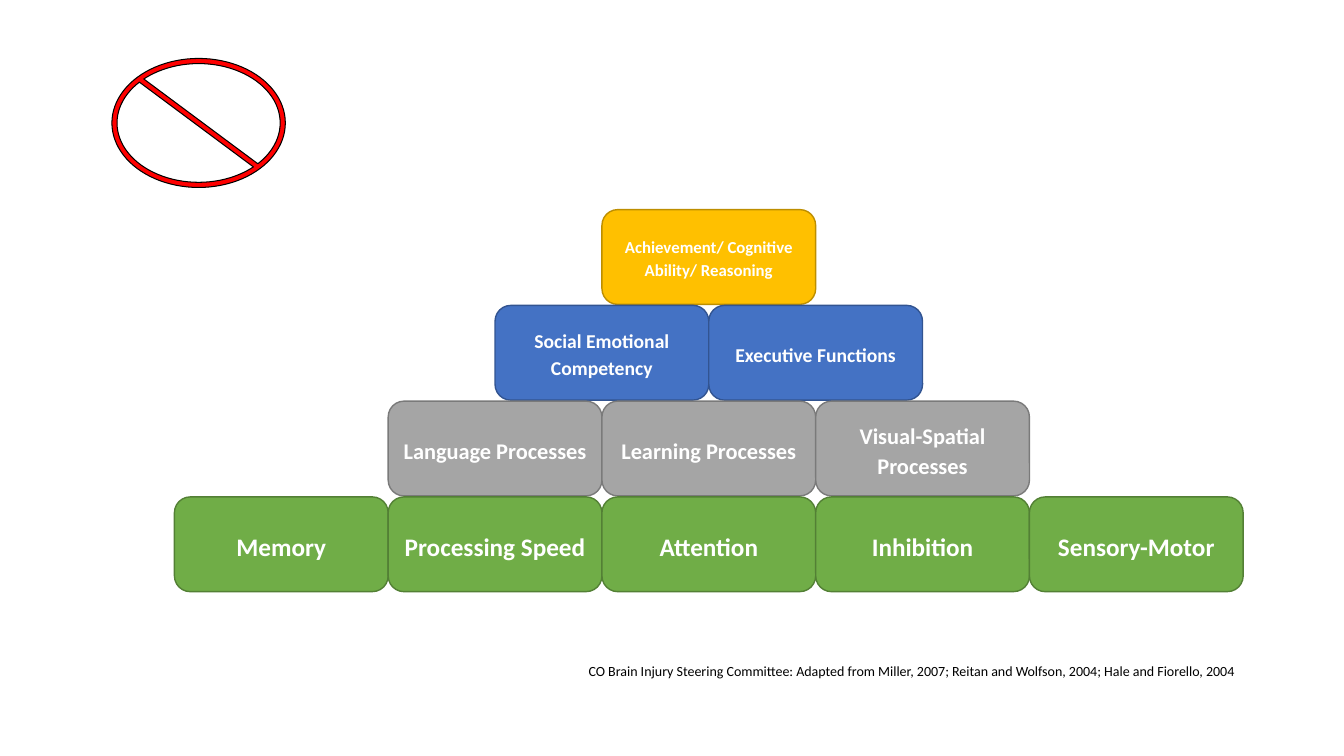
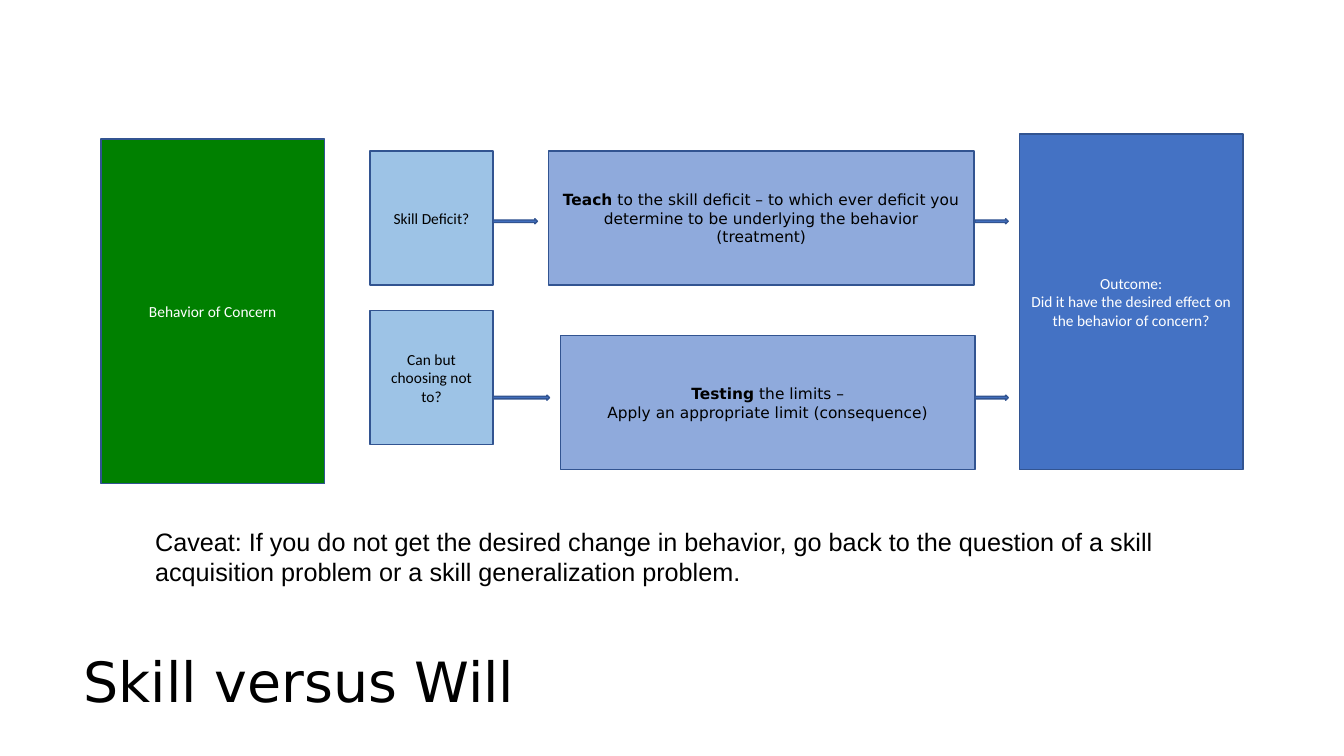
from pptx import Presentation
from pptx.dml.color import RGBColor
from pptx.enum.shapes import MSO_SHAPE
from pptx.enum.text import MSO_ANCHOR, MSO_AUTO_SIZE, PP_ALIGN
from pptx.util import Inches, Pt

WHITE, BLACK, RED = "FFFFFF", "000000", "FF0000"
GREEN, DARK_GREEN = "70AD47", "538035"
GRAY, DARK_GRAY = "A5A5A5", "7A7A7A"
BLUE, DARK_BLUE = "4472C4", "325491"
GOLD, DARK_GOLD = "FFC000", "BD8E00"
SKY, PERIWINKLE, DEEP_GREEN = "9DC3E6", "8FAADC", "008000"
BODY_FONT, ACCENT_FONT, NOTE_FONT = "Calibri", "DejaVu Sans", "Arial"

BLOCK_W, BLOCK_H, ROW_PITCH = 2.12, 0.94, 0.95
PYRAMID_CENTER, PYRAMID_TOP = 7.03, 2.08
PYRAMID_ROWS = [
    (GOLD, DARK_GOLD, 12, ["Achievement/ Cognitive Ability/ Reasoning"]),
    (BLUE, DARK_BLUE, 14, ["Social Emotional Competency", "Executive Functions"]),
    (GRAY, DARK_GRAY, 16, ["Language Processes", "Learning Processes",
                           "Visual-Spatial Processes"]),
    (GREEN, DARK_GREEN, 18, ["Memory", "Processing Speed", "Attention",
                             "Inhibition", "Sensory-Motor"]),
]
PYRAMID_SPACING = {"line_spacing": 1.15, "space_after": Pt(10)}


def rgb(color):
    return RGBColor.from_string(color)


def set_attrs(obj, values):
    for name, value in values.items():
        setattr(obj, name, value)


def write(sp, paragraphs, size, color, font=BODY_FONT, bold=False,
          align=PP_ALIGN.CENTER, anchor=MSO_ANCHOR.MIDDLE, spacing=None):
    """Fill a shape with paragraphs, each a string or a list of (text, bold)."""
    tf = sp.text_frame
    set_attrs(tf, {"word_wrap": True, "auto_size": MSO_AUTO_SIZE.NONE,
                   "vertical_anchor": anchor})
    for i, runs in enumerate(paragraphs):
        p = tf.add_paragraph() if i else tf.paragraphs[0]
        set_attrs(p, {"alignment": align, **(spacing or {})})
        for text, is_bold in [(runs, bold)] if isinstance(runs, str) else runs:
            r = p.add_run()
            r.text = text
            set_attrs(r.font, {"name": font, "size": Pt(size), "bold": is_bold})
            r.font.color.rgb = rgb(color)


def add_shape(slide, kind, box, fill, line=None, line_width=1):
    sp = slide.shapes.add_shape(kind, *map(Inches, box))
    sp.shadow.inherit = False
    sp.fill.solid()
    sp.fill.fore_color.rgb = rgb(fill)
    if line:
        sp.line.color.rgb = rgb(line)
        sp.line.width = Pt(line_width)
    else:
        sp.line.fill.background()
    return sp


def add_pyramid(slide):
    for row, (fill, line, size, labels) in enumerate(PYRAMID_ROWS):
        left = PYRAMID_CENTER - len(labels) * BLOCK_W / 2
        top = PYRAMID_TOP + row * ROW_PITCH
        for col, label in enumerate(labels):
            box = (left + col * BLOCK_W, top, BLOCK_W, BLOCK_H)
            sp = add_shape(slide, MSO_SHAPE.ROUNDED_RECTANGLE, box, fill, line)
            write(sp, [label], size, WHITE, bold=True, spacing=PYRAMID_SPACING)


def add_flow_box(slide, box, fill, paragraphs, color=BLACK, font=BODY_FONT):
    sp = add_shape(slide, MSO_SHAPE.RECTANGLE, box, fill, DARK_BLUE)
    write(sp, paragraphs, 11, color, font)


def add_flow_arrow(slide, left, top, width):
    add_shape(slide, MSO_SHAPE.RIGHT_ARROW, (left, top, width, 0.05), BLUE, DARK_BLUE)


def add_title(slide, text):
    title = slide.shapes.title
    set_attrs(title, {"left": Inches(0.73), "top": Inches(6.42),
                      "width": Inches(11.93), "height": Inches(0.75)})
    write(title, [text], 39.6, BLACK, ACCENT_FONT, align=PP_ALIGN.LEFT,
          spacing={"line_spacing": 0.9})


def build_pyramid_slide(prs):
    slide = prs.slides.add_slide(prs.slide_layouts[6])
    add_pyramid(slide)
    source = add_shape(slide, MSO_SHAPE.RECTANGLE, (5.6, 6.5, 6.74, 0.47), WHITE)
    write(source, ["CO Brain Injury Steering Committee: Adapted from Miller, 2007; "
                   "Reitan and Wolfson, 2004; Hale and Fiorello, 2004"],
          10, BLACK, align=PP_ALIGN.RIGHT, anchor=MSO_ANCHOR.TOP,
          spacing=PYRAMID_SPACING)
    sign = add_shape(slide, MSO_SHAPE.NO_SYMBOL, (1.11, 0.58, 1.72, 1.28),
                     RED, BLACK, 0.75)
    sign.adjustments[0] = 0.04


def build_flow_slide(prs):
    slide = prs.slides.add_slide(prs.slide_layouts[5])
    add_title(slide, "Skill versus Will")
    add_flow_box(slide, (1, 1.38, 2.22, 3.42), DEEP_GREEN,
                 ["Behavior of Concern"], WHITE)
    add_flow_box(slide, (3.67, 1.5, 1.22, 1.33), SKY, ["Skill Deficit?"])
    add_flow_box(slide, (3.67, 3.08, 1.22, 1.33), SKY, ["Can but choosing not to?"])
    add_flow_box(slide, (5.44, 1.5, 4.22, 1.33), PERIWINKLE,
                 [[("Teach", True),
                   (" to the skill deficit – to which ever deficit you determine "
                    "to be underlying the behavior", False)],
                  "(treatment)"], font=ACCENT_FONT)
    add_flow_box(slide, (5.56, 3.33, 4.11, 1.33), PERIWINKLE,
                 [[("Testing", True), (" the limits –", False)],
                  "Apply an appropriate limit (consequence)"], font=ACCENT_FONT)
    add_flow_box(slide, (10.11, 1.33, 2.22, 3.33), BLUE,
                 ["Outcome:",
                  "Did it have the desired effect on the behavior of concern?"], WHITE)
    for top, first_width in ((2.17, 0.44), (3.92, 0.56)):
        add_flow_arrow(slide, 4.89, top, first_width)
        add_flow_arrow(slide, 9.67, top, 0.33)
    caveat = slide.shapes.add_textbox(*map(Inches, (1.44, 5.17, 10.44, 0.71)))
    write(caveat, ["Caveat: If you do not get the desired change in behavior, go back "
                   "to the question of a skill acquisition problem or a skill "
                   "generalization problem."],
          18, BLACK, NOTE_FONT, align=PP_ALIGN.LEFT, anchor=MSO_ANCHOR.TOP)


def main():
    prs = Presentation()
    set_attrs(prs, {"slide_width": Inches(13.33), "slide_height": Inches(7.5)})
    build_pyramid_slide(prs)
    build_flow_slide(prs)
    prs.save("out.pptx")


if __name__ == "__main__":
    main()
